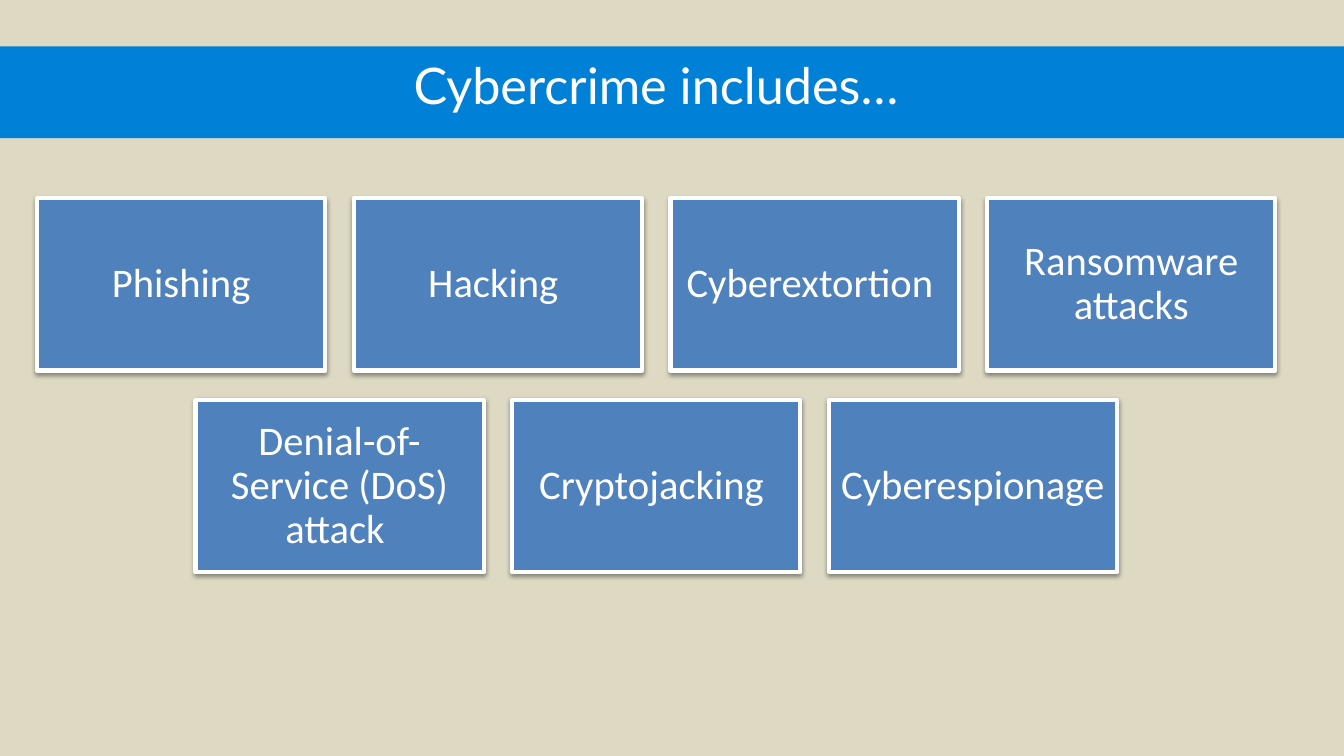
from dataclasses import dataclass

from lxml import etree
from pptx import Presentation
from pptx.dml.color import RGBColor
from pptx.enum.shapes import MSO_SHAPE
from pptx.enum.text import MSO_ANCHOR, PP_ALIGN
from pptx.oxml.ns import qn
from pptx.shapes.autoshape import Shape
from pptx.slide import Slide
from pptx.util import Cm, Pt

RECTANGLE = MSO_SHAPE.RECTANGLE
CENTER = PP_ALIGN.CENTER
MIDDLE = MSO_ANCHOR.MIDDLE

BACKGROUND = "DDD9C3"
BANNER_BLUE = "0080D7"
CARD_BLUE = "4F81BD"
WHITE = "FFFFFF"

SLIDE_WIDTH, SLIDE_HEIGHT = 33.87, 19.05
CARDS_CENTER, CARDS_TOP = 16.54, 5.0
CARD_WIDTH, CARD_HEIGHT = 7.26, 4.34
COLUMN_PITCH, ROW_PITCH = 7.98, 5.08

CRIME_ROWS = [
    # The trailing spaces are part of the centred lines.
    ["Phishing", "Hacking ", "Cyberextortion ", "Ransomware attacks"],
    ["Denial-of-Service (DoS) attack ", "Cryptojacking ", "Cyberespionage "],
]


@dataclass(frozen=True)
class Card:
    text: str
    left: float
    top: float


def color(value: str) -> RGBColor:
    return RGBColor.from_string(value)


def write_text(shape: Shape, text: str, *, size: float, font: str,
               line_spacing: float = 1.0, inset: float = 0.25) -> None:
    frame = shape.text_frame
    frame.word_wrap = True
    frame.vertical_anchor = MIDDLE
    frame.margin_left = frame.margin_right = Cm(inset)
    frame.margin_top = frame.margin_bottom = Cm(inset)
    paragraph = frame.paragraphs[0]
    paragraph.alignment = CENTER
    paragraph.line_spacing = line_spacing
    run = paragraph.add_run()
    run.text = text
    run.font.size = Pt(size)
    run.font.name = font
    run.font.color.rgb = color(WHITE)


def add_rectangle(slide: Slide, left: float, top: float, width: float,
                  height: float, fill: str) -> Shape:
    """Add a filled rectangle without outline or shadow; lengths in cm."""
    shape = slide.shapes.add_shape(RECTANGLE, Cm(left), Cm(top), Cm(width), Cm(height))
    shape.shadow.inherit = False
    shape.fill.solid()
    shape.fill.fore_color.rgb = color(fill)
    shape.line.fill.background()
    return shape


def add_soft_shadow(shape: Shape) -> None:
    effects = shape.element.spPr.find(qn("a:effectLst"))
    shadow = etree.SubElement(effects, qn("a:outerShdw"), blurRad=str(Pt(3.1)),
                              dist=str(Pt(1.6)), dir="5400000", rotWithShape="0")
    black = etree.SubElement(shadow, qn("a:srgbClr"), val="000000")
    etree.SubElement(black, qn("a:alpha"), val="38000")


def layout_cards() -> list[Card]:
    """Centre each row of cards on the same axis."""
    cards = []
    for row, crimes in enumerate(CRIME_ROWS):
        row_width = (len(crimes) - 1) * COLUMN_PITCH + CARD_WIDTH
        row_left = CARDS_CENTER - row_width / 2
        for column, crime in enumerate(crimes):
            cards.append(Card(crime, row_left + column * COLUMN_PITCH,
                              CARDS_TOP + row * ROW_PITCH))
    return cards


def add_card(slide: Slide, card: Card) -> None:
    shape = add_rectangle(slide, card.left, card.top, CARD_WIDTH, CARD_HEIGHT, CARD_BLUE)
    shape.line.color.rgb = color(WHITE)
    shape.line.width = Pt(3)
    add_soft_shadow(shape)
    write_text(shape, card.text, size=29, font="Calibri", line_spacing=0.9, inset=0.3)


def main() -> None:
    presentation = Presentation()
    presentation.slide_width = Cm(SLIDE_WIDTH)
    presentation.slide_height = Cm(SLIDE_HEIGHT)
    slide = presentation.slides.add_slide(presentation.slide_layouts[6])
    slide.background.fill.solid()
    slide.background.fill.fore_color.rgb = color(BACKGROUND)

    add_rectangle(slide, 0, 1.17, SLIDE_WIDTH, 2.31, BANNER_BLUE)
    title = slide.shapes.add_textbox(Cm(0.94), Cm(0.53), Cm(31.19), Cm(3.18))
    write_text(title, "Cybercrime includes…", size=36, font="Lato")

    for card in layout_cards():
        add_card(slide, card)

    presentation.save("out.pptx")


if __name__ == "__main__":
    main()
